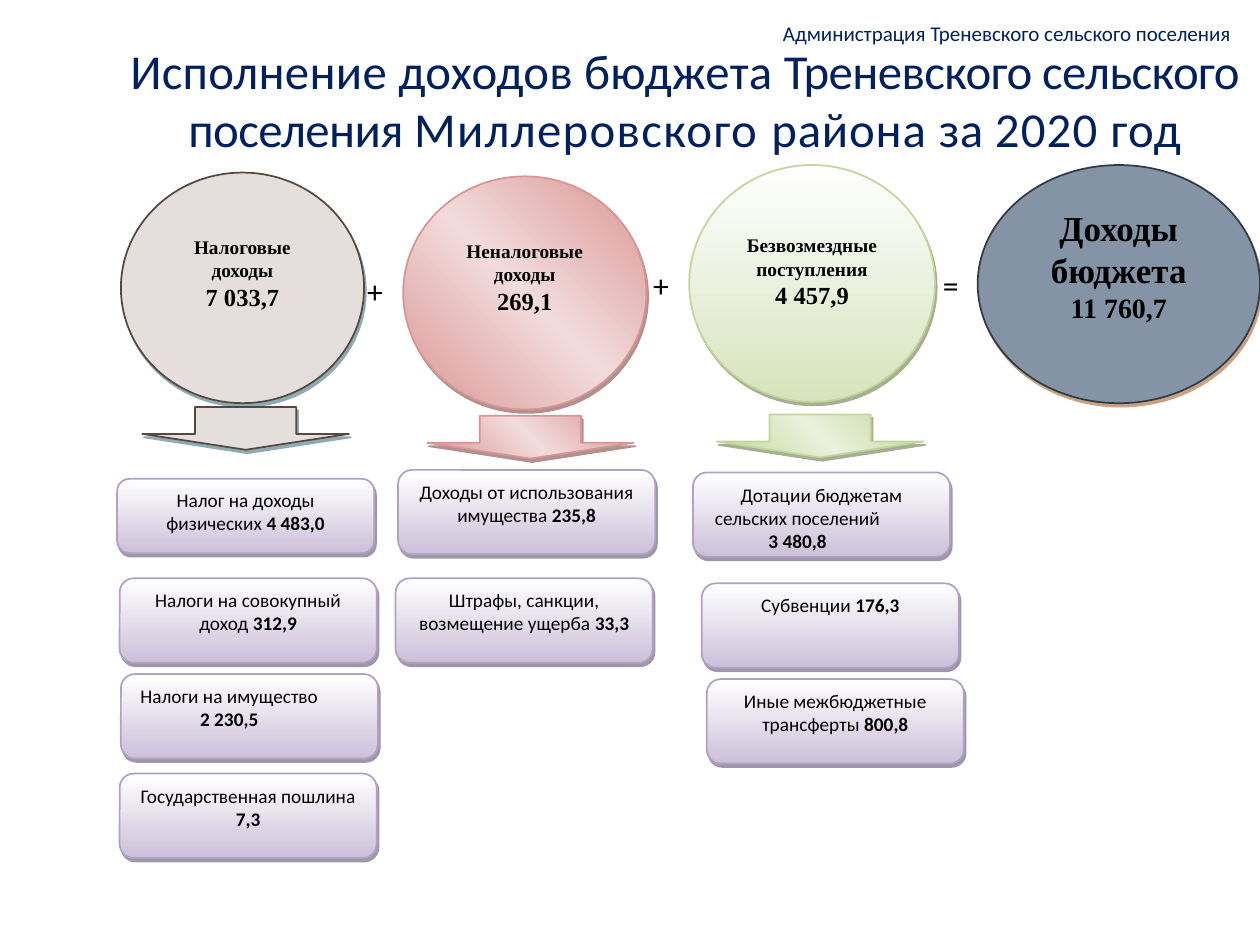
"""Build the slide on budget income of the Trenevskoye rural settlement for 2020."""
from copy import deepcopy

from lxml.etree import SubElement
from pptx import Presentation
from pptx.dml.color import RGBColor
from pptx.enum.shapes import MSO_SHAPE as Shape
from pptx.enum.text import MSO_ANCHOR as Anchor, MSO_AUTO_SIZE as AutoSize, PP_ALIGN as Align
from pptx.oxml.ns import qn
from pptx.util import Inches, Pt

COLORS = {"navy": "002060", "black": "000000"}
STYLES = {
    "tax": {"fill": ["E4DFDC"], "line": "564841", "shadow": "205867"},
    "nontax": {"fill": ["D99594", "F2DBDB", "D99594"], "angle": 45, "line": "D99594", "shadow": "622423"},
    "grant": {"fill": ["FFFFFF", "D6E3BC"], "angle": 270, "line": "C2D69B", "shadow": "4E6128"},
    "grant_arrow": {"fill": ["C2D69B", "EAF1DD", "C2D69B"], "angle": 45, "line": "C2D69B", "shadow": "4E6128"},
    "total": {"fill": ["8494A6"], "line": "323B44", "shadow": "974706"},
    "item": {"fill": ["FFFFFF", "CCC0D9"], "angle": 270, "line": "B2A1C7", "shadow": "3F3151"},
}


def add_styled_shape(kind, place, style):
    shape = slide.shapes.add_shape(kind, *map(Inches, place))
    colors = style["fill"]
    if len(colors) == 1:
        shape.fill.solid()
        shape.fill.fore_color.rgb = RGBColor.from_string(colors[0])
    else:
        shape.fill.gradient()
        shape.fill.gradient_angle = style["angle"]
        stop_list = shape.element.spPr.find(".//" + qn("a:gsLst"))
        if len(colors) == 3:
            stop_list.append(deepcopy(stop_list[0]))
        for index, (stop, color) in enumerate(zip(shape.fill.gradient_stops, colors)):
            stop.color.rgb = RGBColor.from_string(color)
            stop.position = index / (len(colors) - 1)
    shape.line.color.rgb = RGBColor.from_string(style["line"])
    shape.line.width = Pt(1)
    shape.shadow.inherit = False
    effects = shape.element.spPr.find(qn("a:effectLst"))
    shadow = SubElement(effects, qn("a:outerShdw"), blurRad="0", dist=str(Pt(2.2)),
                        dir=str(63 * 60000), algn="ctr", rotWithShape="0")
    shadow_color = SubElement(shadow, qn("a:srgbClr"), val=style["shadow"])
    SubElement(shadow_color, qn("a:alpha"), val="50000")
    return shape


def write_text(shape, paragraphs, anchor=Anchor.TOP, align=Align.CENTER, color="black", **font_format):
    frame = shape.text_frame
    for name, value in {"word_wrap": True, "auto_size": AutoSize.NONE, "vertical_anchor": anchor}.items():
        setattr(frame, name, value)
    for index, runs in enumerate(paragraphs):
        paragraph = frame.add_paragraph() if index else frame.paragraphs[0]
        paragraph.alignment = align
        for text, run_format in runs:
            run = paragraph.add_run()
            run.text = text
            run.font.color.rgb = RGBColor.from_string(COLORS[color])
            for name, value in {**font_format, **run_format}.items():
                setattr(run.font, name, value)
    return frame


presentation = Presentation()
presentation.slide_width = Inches(10)
presentation.slide_height = Inches(7.5)
slide = presentation.slides.add_slide(presentation.slide_layouts[5])

title = slide.shapes.title
for name, value in zip(("left", "top", "width", "height"), (0.87, 0.54, 9.13, 1.07)):
    setattr(title, name, Inches(value))
title_parts = [("Исполнение доходов бюджета", 20), (" Треневского сельского поселения ", -30),
               ("Миллеровского ", 80), ("района ", 50), ("за ", 20), ("2020 год", 70)]
frame = write_text(title, [[(text, {}) for text, _ in title_parts]], Anchor.MIDDLE,
                   color="navy", name="Calibri", size=Pt(27.9))
for name, value in {"margin_left": 0, "margin_right": 0, "margin_top": 0, "margin_bottom": 0.58}.items():
    setattr(frame, name, Inches(value))
for run, (_, spacing) in zip(frame.paragraphs[0].runs, title_parts):
    run.font._element.set("spc", str(spacing))

header = slide.shapes.add_textbox(Inches(3.54), Inches(0.14), Inches(6.33), Inches(0.24))
write_text(header, [[("Администрация Треневского сельского поселения", {})]], Anchor.MIDDLE,
           Align.RIGHT, "navy", name="Calibri", size=Pt(12))

for left, top, style in [(1.13, 3.23, "tax"), (5.69, 3.29, "grant_arrow"), (3.39, 3.3, "nontax")]:
    arrow = add_styled_shape(Shape.DOWN_ARROW, (left, top, 1.64, 0.34), STYLES[style])
    arrow.adjustments[0], arrow.adjustments[1] = 0.49, 0.37

for sign, left, top in [("+", 2.77, 2.11), ("+", 5.04, 2.06), ("=", 7.34, 2.06)]:
    box = slide.shapes.add_textbox(Inches(left), Inches(top), Inches(0.41), Inches(0.4))
    write_text(box, [[(sign, {})]], name="Calibri", size=Pt(18))

circles = [
    ((0.96, 1.37, 1.93, 1.83), "tax", "Налоговые доходы", "7 033,7", 11, 14, 0.23),
    ((3.2, 1.4, 1.93, 1.85), "nontax", "Неналоговые доходы", "269,1", 11, 14, 0.23),
    ((5.47, 1.31, 1.95, 1.88), "grant", "Безвозмездные поступления", "4 457,9", 11, 14, 0.27),
    ((7.76, 1.31, 2.24, 1.89), "total", "Доходы бюджета", "11 760,7", 20, 16, 0.05),
]
for place, style, label, amount, label_size, amount_size, margin_top in circles:
    circle = add_styled_shape(Shape.FLOWCHART_CONNECTOR, place, STYLES[style])
    frame = write_text(circle, [[(label, {"size": Pt(label_size)})], [(amount, {"size": Pt(amount_size)})]],
                       name="Times New Roman", bold=True)
    frame.margin_top = Inches(margin_top)
    frame.paragraphs[-1].space_after = Pt(10)

items = [
    (0.93, 3.8, 0.59, ["Налог на доходы физических "], "4 483,0", 0),
    (0.95, 4.59, 0.67, ["Налоги на совокупный доход "], "312,9", 0),
    (0.96, 5.35, 0.67, ["Налоги на имущество", ""], "2 230,5", 0.32),
    (0.95, 6.14, 0.67, ["Государственная пошлина "], "7,3", 0),
    (3.16, 3.73, 0.67, ["Доходы от использования имущества "], "235,8", 0),
    (3.14, 4.59, 0.67, ["Штрафы, санкции, возмещение ущерба "], "33,3", 0),
    (5.5, 3.75, 0.67, ["Дотации бюджетам", "сельских поселений", ""], "3 480,8", 0.38),
    (5.57, 4.63, 0.67, ["Субвенции "], "176,3", 0),
    (5.61, 5.39, 0.67, ["Иные межбюджетные трансферты "], "800,8", 0),
]
for left, top, height, lines, amount, right_indent in items:
    item = add_styled_shape(Shape.FLOWCHART_ALTERNATE_PROCESS, (left, top, 2.04, height), STYLES["item"])
    paragraphs = [[(line, {})] if line else [] for line in lines]
    paragraphs[-1].append((amount, {"bold": True}))
    frame = write_text(item, paragraphs, name="Calibri", size=Pt(11))
    if right_indent:
        frame.paragraphs[-2]._p.get_or_add_pPr().set("marR", str(Inches(right_indent)))

presentation.save("out.pptx")
